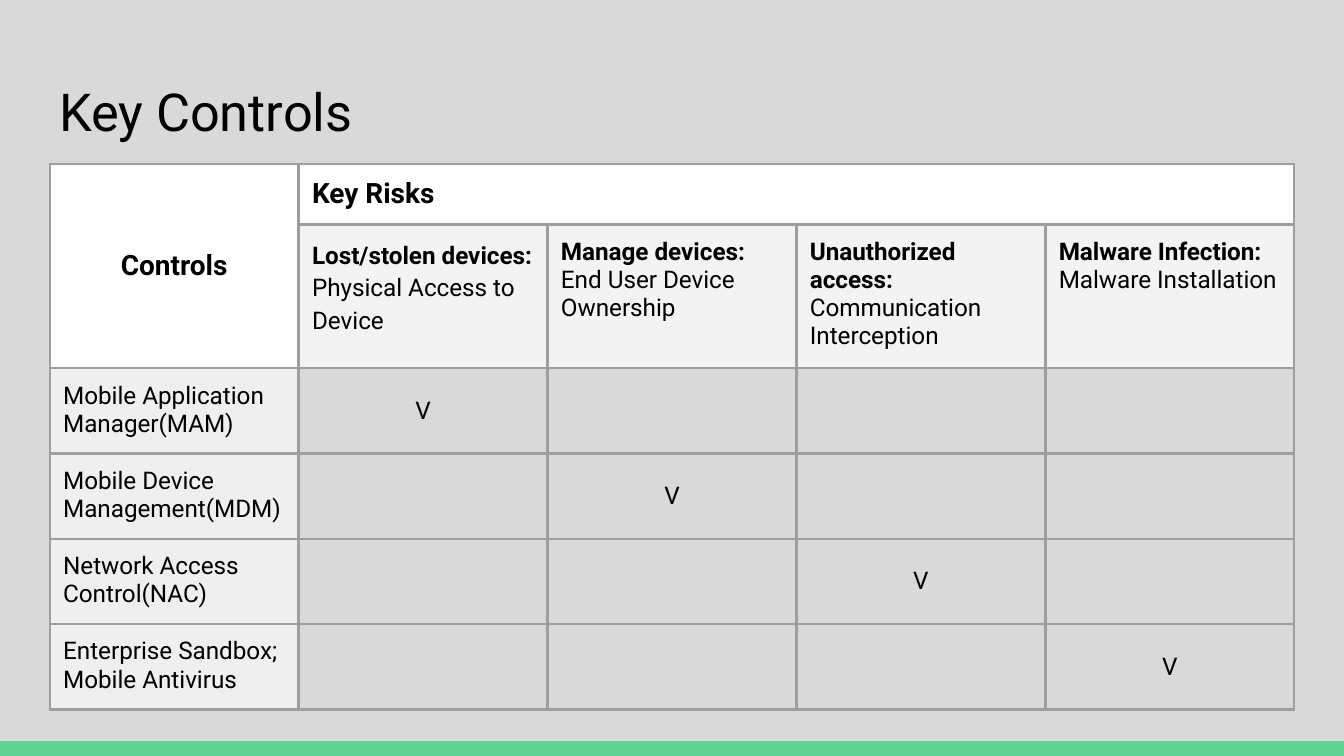
"""Build the Key Controls slide: a matrix of mobile controls against key risks."""
from dataclasses import dataclass

from lxml import etree
from pptx import Presentation
from pptx import util as u
from pptx.dml.color import RGBColor
from pptx.enum import shapes, text
from pptx.oxml import ns

FONT = "Roboto"
BLACK = RGBColor(0x00, 0x00, 0x00)
WHITE = RGBColor(0xFF, 0xFF, 0xFF)
BACK = RGBColor(0xD9, 0xD9, 0xD9)
GREEN = RGBColor(0x63, 0xD2, 0x97)
PALE = RGBColor(0xF3, 0xF3, 0xF3)
LIGHT = RGBColor(0xEF, 0xEF, 0xEF)
RULE = RGBColor(0x9E, 0x9E, 0x9E)
WIDE = u.Inches(10)
HIGH = WIDE * 9 // 16
PAD = u.Inches(0.1)


@dataclass(frozen=True)
class Risk:
    name: str
    detail: str
    split: bool = False
    loose: bool = False


RISKS = (
    Risk("Lost/stolen devices:", "Physical Access to Device", loose=True),
    Risk("Manage devices:", "End User Device Ownership", split=True),
    Risk("Unauthorized access:", "Communication Interception"),
    Risk("Malware Infection:", "Malware Installation"),
)
TOOLS = (
    "Mobile Application Manager(MAM)",
    "Mobile Device Management(MDM)",
    "Network Access Control(NAC)",
    "Enterprise Sandbox; Mobile Antivirus",
)


def style(run, size: float, bold: bool = False) -> None:
    """Set the face, size and weight of a run."""
    run.font.name = FONT
    run.font.size = u.Pt(size)
    run.font.bold = bold
    run.font.color.rgb = BLACK


def pad(item) -> None:
    """Give a cell or text frame even margins."""
    item.margin_left = item.margin_right = PAD
    item.margin_top = item.margin_bottom = PAD


def edge(cell) -> None:
    """Draw a grey line on each side of a cell."""
    props = cell._tc.get_or_add_tcPr()
    for side in ("lnL", "lnR", "lnT", "lnB"):
        line = etree.SubElement(props, ns.qn(f"a:{side}"), w=str(u.Pt(1.5)))
        fill = etree.SubElement(line, ns.qn("a:solidFill"))
        etree.SubElement(fill, ns.qn("a:srgbClr"), val=str(RULE))


def write(cell, words: str, size: float = 13, bold: bool = False,
          mid: bool = False) -> None:
    """Put one styled run in a cell, centred if asked."""
    cell.text_frame.text = words
    para = cell.text_frame.paragraphs[0]
    style(para.runs[0], size, bold)
    if mid:
        para.alignment = text.PP_ALIGN.CENTER
        cell.vertical_anchor = text.MSO_ANCHOR.MIDDLE


def describe(cell, risk: Risk) -> None:
    """Write a bold risk name followed by its detail."""
    write(cell, risk.name, bold=True)
    para = cell.text_frame.paragraphs[0]
    if risk.loose:
        para.line_spacing = 1.15
        para.space_after = u.Pt(16)
    if risk.split:
        para = cell.text_frame.add_paragraph()
    run = para.add_run()
    run.text = risk.detail if risk.split else f" {risk.detail}"
    style(run, 13)


def shade(cell, color: RGBColor) -> None:
    """Fill a cell with one colour."""
    cell.fill.solid()
    cell.fill.fore_color.rgb = color


def add_grid(slide) -> None:
    """Add the table of controls and risks."""
    count = len(RISKS) + 1
    wide, high = u.Inches(9.26), u.Inches(4.06)
    tops = [u.Inches(0.45), u.Inches(1.07)]
    rest = (high - sum(tops)) // len(TOOLS)
    rows = tops + [rest] * len(TOOLS)
    frame = slide.shapes.add_table(
        len(rows), count, u.Inches(0.37), u.Inches(1.22), wide, high)
    grid = frame.table
    grid.first_row = grid.horz_banding = False
    for col in grid.columns:
        col.width = wide // count
    for row, size in zip(grid.rows, rows):
        row.height = size
    for cell in grid.iter_cells():
        pad(cell)
        edge(cell)
        cell.fill.background()

    grid.cell(0, 0).merge(grid.cell(1, 0))
    grid.cell(0, 1).merge(grid.cell(0, count - 1))
    write(grid.cell(0, 0), "Controls", 15, True, True)
    write(grid.cell(0, 1), "Key Risks", 15, True)
    for cell in (grid.cell(0, 0), grid.cell(0, 1)):
        shade(cell, WHITE)
    for col, risk in enumerate(RISKS, 1):
        describe(grid.cell(1, col), risk)
        shade(grid.cell(1, col), PALE)
    for step, tool in enumerate(TOOLS):
        head = grid.cell(step + 2, 0)
        write(head, tool)
        shade(head, LIGHT)
        write(grid.cell(step + 2, step + 1), "V", mid=True)


def add_title(slide) -> None:
    """Place and format the title."""
    title = slide.shapes.title
    title.left, title.top = u.Inches(0.34), u.Inches(0.49)
    title.width, title.height = u.Inches(9.32), u.Inches(0.63)
    frame = title.text_frame
    frame.text = "Key Controls"
    frame.auto_size = text.MSO_AUTO_SIZE.NONE
    frame.vertical_anchor = text.MSO_ANCHOR.TOP
    pad(frame)
    para = frame.paragraphs[0]
    para.alignment = text.PP_ALIGN.LEFT
    style(para.runs[0], 28)


def add_bar(slide) -> None:
    """Add the green bar along the foot."""
    thick = u.Inches(0.11)
    bar = slide.shapes.add_shape(
        shapes.MSO_SHAPE.RECTANGLE, 0, HIGH - thick, WIDE, thick)
    bar.shadow.inherit = False
    bar.fill.solid()
    bar.fill.fore_color.rgb = GREEN
    bar.line.fill.background()


def main() -> None:
    """Build and save the slide."""
    deck = Presentation()
    deck.slide_width, deck.slide_height = WIDE, HIGH
    slide = deck.slides.add_slide(deck.slide_layouts[5])
    slide.background.fill.solid()
    slide.background.fill.fore_color.rgb = BACK
    add_bar(slide)
    add_title(slide)
    add_grid(slide)
    deck.save("out.pptx")


if __name__ == "__main__":
    main()
